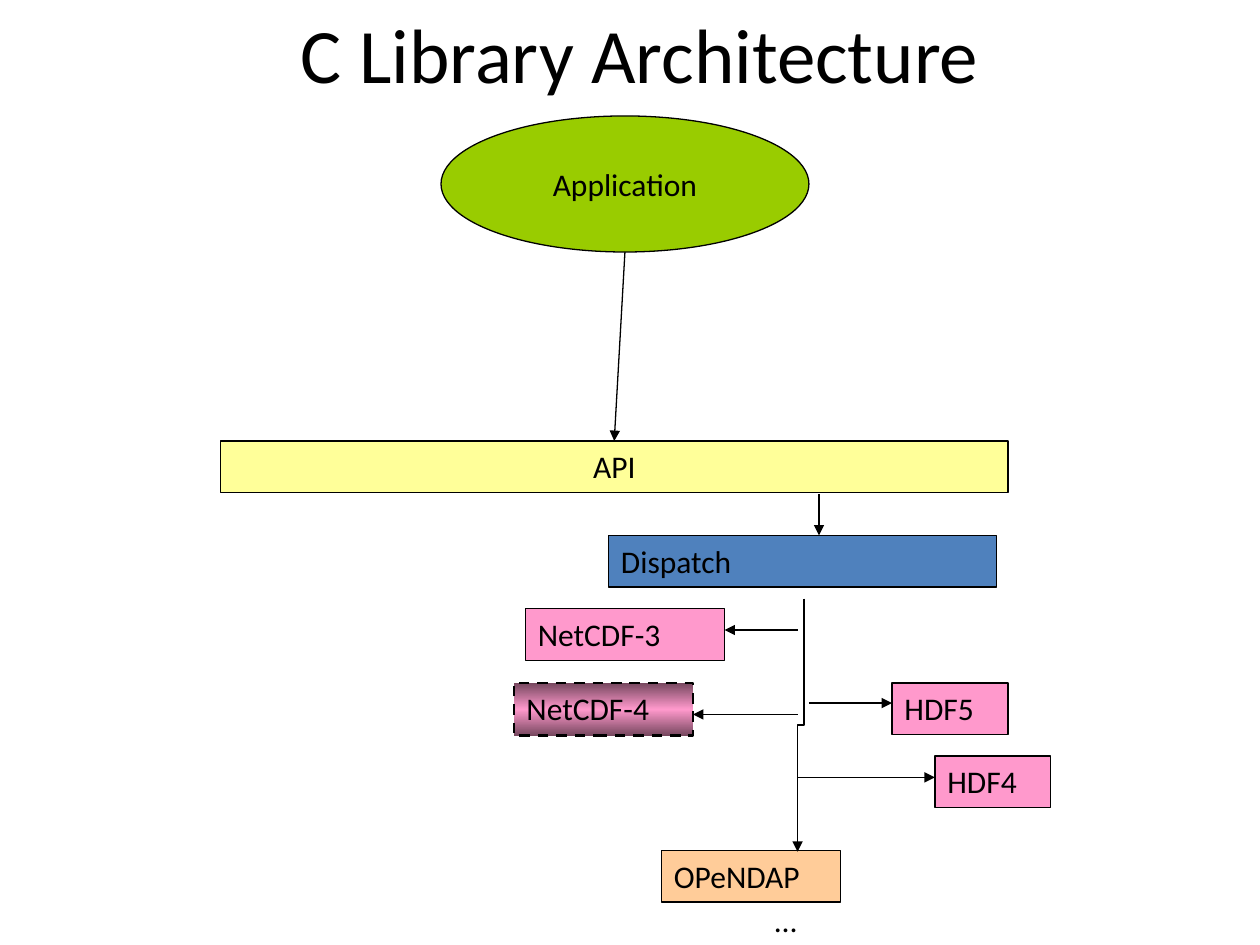
"""Build the C Library Architecture slide."""
from copy import deepcopy
from dataclasses import dataclass
from typing import Any, Optional

from lxml.etree import SubElement
from pptx import Presentation
from pptx.dml.color import RGBColor
from pptx.enum.dml import MSO_LINE
from pptx.enum.shapes import MSO_CONNECTOR, MSO_SHAPE
from pptx.enum.text import MSO_ANCHOR, MSO_AUTO_SIZE, PP_ALIGN
from pptx.oxml.ns import qn
from pptx.util import Inches, Pt


@dataclass(frozen=True)
class Theme:
    """Colours, font and sizes of the diagram."""
    font: str = "Calibri"
    ink: str = "000000"
    application: str = "99CC00"
    api: str = "FFFF99"
    dispatch: str = "4F81BD"
    storage: str = "FF99CC"
    storage_shade: str = "76475E"
    remote: str = "FFCC99"
    title_size: float = 44
    label_size: float = 18
    line_width: float = 0.75
    dash_width: float = 1.5


THEME = Theme()


@dataclass(frozen=True)
class Layer:
    """A labelled part of the library."""
    label: str
    left: float
    top: float
    width: float
    fill: str
    height: float = 0.41
    align: PP_ALIGN = PP_ALIGN.LEFT
    outline: MSO_SHAPE = MSO_SHAPE.RECTANGLE
    shaded: bool = False


@dataclass(frozen=True)
class Call:
    """An arrow between two points, joined to the top of its target if named."""
    start: tuple[float, float]
    end: tuple[float, float]
    target: Optional[str] = None


LAYERS = [
    Layer("Application", 3.5, 0.92, 2.92, THEME.application, 1.08,
          PP_ALIGN.CENTER, MSO_SHAPE.OVAL),
    Layer("API", 1.75, 3.5, 6.25, THEME.api, align=PP_ALIGN.CENTER),
    Layer("Dispatch", 4.83, 4.25, 3.08, THEME.dispatch),
    Layer("NetCDF-3", 4.17, 4.83, 1.58, THEME.storage),
    Layer("NetCDF-4", 4.08, 5.42, 1.42, THEME.storage, 0.42, shaded=True),
    Layer("HDF5", 7.08, 5.42, 0.92, THEME.storage),
    Layer("HDF4", 7.42, 6, 0.92, THEME.storage),
    Layer("OPeNDAP", 5.25, 6.75, 1.42, THEME.remote),
]
CALLS = [
    Call((4.96, 2), (4.88, 3.5), "API"),
    Call((6.5, 3.92), (6.5, 4.25)),
    Call((6.33, 5), (5.75, 5)),
    Call((6.33, 5.67), (5.5, 5.67)),
    Call((6.42, 5.58), (7.08, 5.58)),
    Call((6.33, 6.17), (7.42, 6.17)),
]


def apply_format(target: Any, values: dict[str, Any]) -> None:
    """Set each named attribute on the target."""
    for attribute, value in values.items():
        setattr(target, attribute, value)


def write_text(holder: Any, text: str, size: float, align: PP_ALIGN,
               frame_format: dict[str, Any]) -> None:
    """Write one formatted paragraph into a shape."""
    frame = holder.text_frame
    frame.text = text
    apply_format(frame, frame_format)
    paragraph = frame.paragraphs[0]
    paragraph.alignment = align
    font = paragraph.runs[0].font
    apply_format(font, {"name": THEME.font, "size": Pt(size)})
    font.color.rgb = RGBColor.from_string(THEME.ink)


def ink_line(line: Any, width: float = THEME.line_width) -> None:
    """Give a line the ink colour and a width."""
    line.color.rgb = RGBColor.from_string(THEME.ink)
    line.width = Pt(width)


def shade(fill: Any, middle: str, edge: str) -> None:
    """Fill with a vertical gradient, dark at both edges."""
    fill.gradient()
    fill.gradient_angle = 90
    last = fill.gradient_stops[1]._gs
    last.addprevious(deepcopy(last))
    for stop, position, color in zip(fill.gradient_stops, (0, 0.5, 1), (edge, middle, edge)):
        stop.position = position
        stop.color.rgb = RGBColor.from_string(color)


def draw_layer(shapes: Any, layer: Layer) -> Any:
    """Draw a layer and return its shape."""
    block = shapes.add_shape(layer.outline, Inches(layer.left), Inches(layer.top),
                             Inches(layer.width), Inches(layer.height))
    block.shadow.inherit = False
    if layer.shaded:
        shade(block.fill, layer.fill, THEME.storage_shade)
        ink_line(block.line, THEME.dash_width)
        block.line.dash_style = MSO_LINE.DASH
    else:
        block.fill.solid()
        block.fill.fore_color.rgb = RGBColor.from_string(layer.fill)
        ink_line(block.line)
    if layer.outline == MSO_SHAPE.OVAL:
        frame_format = {"word_wrap": False, "vertical_anchor": MSO_ANCHOR.MIDDLE}
    else:
        frame_format = {"word_wrap": True, "vertical_anchor": MSO_ANCHOR.TOP,
                        "auto_size": MSO_AUTO_SIZE.SHAPE_TO_FIT_TEXT}
    write_text(block, layer.label, THEME.label_size, layer.align, frame_format)
    return block


def draw_arrow(shapes: Any, kind: MSO_CONNECTOR, start: tuple[float, float],
               end: tuple[float, float]) -> Any:
    """Draw a connector with a triangular head at its end."""
    arrow = shapes.add_connector(kind, *map(Inches, (*start, *end)))
    ink_line(arrow.line)
    SubElement(arrow.line._get_or_add_ln(), qn("a:tailEnd"), type="triangle")
    SubElement(arrow._element.spPr, qn("a:effectLst"))
    return arrow


def draw_call(shapes: Any, call: Call, blocks: dict[str, Any]) -> None:
    """Draw a call, joined to the layer it names."""
    arrow = draw_arrow(shapes, MSO_CONNECTOR.STRAIGHT, call.start, call.end)
    if call.target:
        arrow.end_connect(blocks[call.target], 0)


def draw_trunk(shapes: Any, start: tuple[float, float], end: tuple[float, float]) -> None:
    """Draw the downward elbow as a sideways one turned a quarter."""
    middle_x, middle_y = (start[0] + end[0]) / 2, (start[1] + end[1]) / 2
    half_run, half_step = (end[1] - start[1]) / 2, (start[0] - end[0]) / 2
    trunk = draw_arrow(shapes, MSO_CONNECTOR.ELBOW,
                       (middle_x - half_run, middle_y - half_step),
                       (middle_x + half_run, middle_y + half_step))
    trunk._element.spPr.find(qn("a:xfrm")).set("rot", str(90 * 60000))


def main() -> None:
    """Assemble and save the slide."""
    deck = Presentation()
    apply_format(deck, {"slide_width": Inches(10), "slide_height": Inches(7.5)})
    slide = deck.slides.add_slide(deck.slide_layouts[5])
    shapes = slide.shapes
    title = shapes.title
    apply_format(title, {"left": Inches(0.58), "top": Inches(0),
                         "width": Inches(9), "height": Inches(1.25)})
    write_text(title, "C Library Architecture", THEME.title_size, PP_ALIGN.CENTER,
               {"word_wrap": True, "vertical_anchor": MSO_ANCHOR.TOP})
    blocks = {layer.label: draw_layer(shapes, layer) for layer in LAYERS}
    for call in CALLS:
        draw_call(shapes, call, blocks)
    draw_trunk(shapes, (6.38, 4.75), (6.33, 6.76))
    more = shapes.add_textbox(Inches(5.25), Inches(7.1), Inches(1.17), Inches(0.4))
    write_text(more, "…", THEME.label_size, PP_ALIGN.RIGHT,
               {"word_wrap": True, "auto_size": MSO_AUTO_SIZE.SHAPE_TO_FIT_TEXT})
    deck.save("out.pptx")


if __name__ == "__main__":
    main()
